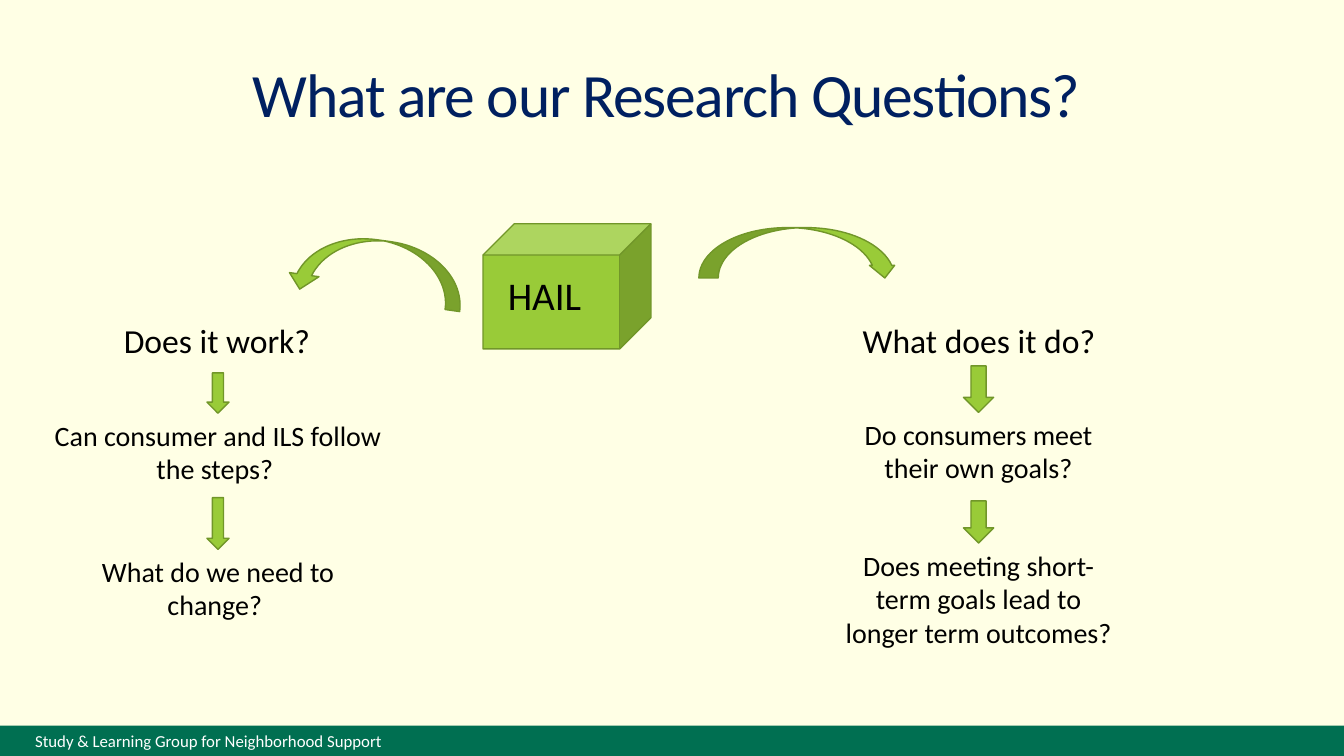
from dataclasses import dataclass, field
from typing import Optional

import pptx
import pptx.dml.color
import pptx.enum.shapes
import pptx.enum.text
import pptx.util

Kind = pptx.enum.shapes.MSO_SHAPE
Align = pptx.enum.text.PP_ALIGN
Anchor = pptx.enum.text.MSO_ANCHOR

COLUMNS, ROWS = 160, 90
WIDTH, HEIGHT = pptx.util.Inches(13.33), pptx.util.Inches(7.5)


@dataclass(frozen=True)
class Theme:
    font: str = "Calibri"
    page: str = "FFFFE5"
    footer: str = "006F51"
    footer_text: str = "FFFFFF"
    title: str = "002060"
    text: str = "000000"
    green: str = "99CB38"
    outline: str = "719629"
    title_size: float = 44
    cube_size: float = 28
    heading_size: float = 24
    question_size: float = 20
    footer_size: float = 12
    title_spacing: int = -90


@dataclass(frozen=True)
class Frame:
    """A place on the grid, in columns and rows."""
    left: float
    top: float
    width: float
    height: float

    def lengths(self) -> tuple[int, int, int, int]:
        across, down = WIDTH / COLUMNS, HEIGHT / ROWS
        return (round(self.left * across), round(self.top * down),
                round(self.width * across), round(self.height * down))


@dataclass(frozen=True)
class Label:
    text: str
    frame: Frame
    size: float
    align: Align = Align.LEFT
    color: Optional[str] = None


@dataclass(frozen=True)
class Figure:
    kind: Kind
    frame: Frame
    adjustments: tuple[float, ...] = ()
    rotation: float = 0
    mirrored: bool = False


@dataclass(frozen=True)
class Question:
    text: str
    top: float
    width: float
    height: float
    arrow_top: float


@dataclass(frozen=True)
class Branch:
    """A heading with questions below it, each reached by an arrow on the axis."""
    axis: float
    heading: str
    heading_frame: Frame
    arrow_width: float
    questions: list[Question] = field(default_factory=list)


THEME = Theme()

FIGURES = [
    Figure(Kind.CUBE, Frame(57.5, 26.64, 20, 14.9)),
    Figure(Kind.CURVED_DOWN_ARROW, Frame(34.32, 28.56, 21, 7.1), (0.247, 0.5, 0.25), 8, True),
    Figure(Kind.CURVED_DOWN_ARROW, Frame(83.2, 27.1, 23.64, 6), (0.385, 0.5, 0.25)),
]

BRANCHES = [
    Branch(25.95, "Does it work?", Frame(13.56, 37.44, 26.5, 6), 2.64, [
        Question("Can consumer and ILS follow the steps? ", 49.2, 42.1, 9.25, 44.4),
        Question("What do we need to change? ", 65.4, 34.56, 9.25, 59.25),
    ]),
    Branch(116.5, "What does it do?", Frame(101.52, 37.44, 34.1, 6), 3.6, [
        Question("Do consumers meet their own goals?", 49.1, 34.1, 9.25, 43.56),
        Question("Does meeting short-term goals lead to longer term outcomes? ",
                 64.65, 34.56, 13.3, 59.64),
    ]),
]


def rgb(color: str) -> pptx.dml.color.RGBColor:
    return pptx.dml.color.RGBColor.from_string(color)


def write(shape, label: Label):
    """Fill a shape with one styled paragraph and return the paragraph."""
    box = shape.text_frame
    box.word_wrap = True
    para = box.paragraphs[0]
    para.text = label.text
    para.alignment = label.align
    para.font.name = THEME.font
    para.font.size = pptx.util.Pt(label.size)
    para.font.color.rgb = rgb(label.color or THEME.text)
    return para


def add_label(page, label: Label):
    return write(page.shapes.add_textbox(*label.frame.lengths()), label)


def add_figure(page, figure: Figure) -> None:
    shape = page.shapes.add_shape(figure.kind, *figure.frame.lengths())
    shape.shadow.inherit = False
    shape.fill.solid()
    shape.fill.fore_color.rgb = rgb(THEME.green)
    shape.line.color.rgb = rgb(THEME.outline)
    shape.line.width = pptx.util.Pt(1)
    shape.rotation = figure.rotation
    for index, value in enumerate(figure.adjustments):
        shape.adjustments[index] = value
    if figure.mirrored:
        shape._element.spPr.xfrm.set("flipH", "1")


def add_branch(page, branch: Branch) -> None:
    add_label(page, Label(branch.heading, branch.heading_frame, THEME.heading_size))
    for question in branch.questions:
        add_figure(page, Figure(Kind.DOWN_ARROW, Frame(
            branch.axis - branch.arrow_width / 2, question.arrow_top,
            branch.arrow_width, question.top - question.arrow_top)))
        add_label(page, Label(question.text, Frame(
            branch.axis - question.width / 2, question.top,
            question.width, question.height), THEME.question_size, Align.CENTER))


def add_footer(page) -> None:
    frame = Frame(0, 86.4, COLUMNS, 3.6)
    bar = page.shapes.add_shape(Kind.RECTANGLE, *frame.lengths())
    bar.shadow.inherit = False
    bar.fill.solid()
    bar.fill.fore_color.rgb = rgb(THEME.footer)
    bar.line.fill.background()
    para = write(bar, Label("Study & Learning Group for Neighborhood Support",
                            frame, THEME.footer_size, color=THEME.footer_text))
    para._p.get_or_add_pPr().set("marL", str(pptx.util.Inches(0.25)))


def add_title(page) -> None:
    frame = Frame(8.64, 6.6, 141.4, 10.3)
    shape = page.shapes.add_textbox(*frame.lengths())
    shape.text_frame.vertical_anchor = Anchor.MIDDLE
    para = write(shape, Label("What are our Research Questions?", frame,
                              THEME.title_size, Align.CENTER, THEME.title))
    para.line_spacing = 0.85
    for span in para.runs:
        span._r.get_or_add_rPr().set("spc", str(THEME.title_spacing))


def main() -> None:
    deck = pptx.Presentation()
    deck.slide_width, deck.slide_height = WIDTH, HEIGHT
    page = deck.slides.add_slide(deck.slide_layouts[6])
    page.background.fill.solid()
    page.background.fill.fore_color.rgb = rgb(THEME.page)
    add_footer(page)
    add_title(page)
    for figure in FIGURES:
        add_figure(page, figure)
    add_label(page, Label("HAIL", Frame(59.28, 31.68, 13.8, 6.84), THEME.cube_size))
    for branch in BRANCHES:
        add_branch(page, branch)
    deck.save("out.pptx")


if __name__ == "__main__":
    main()
